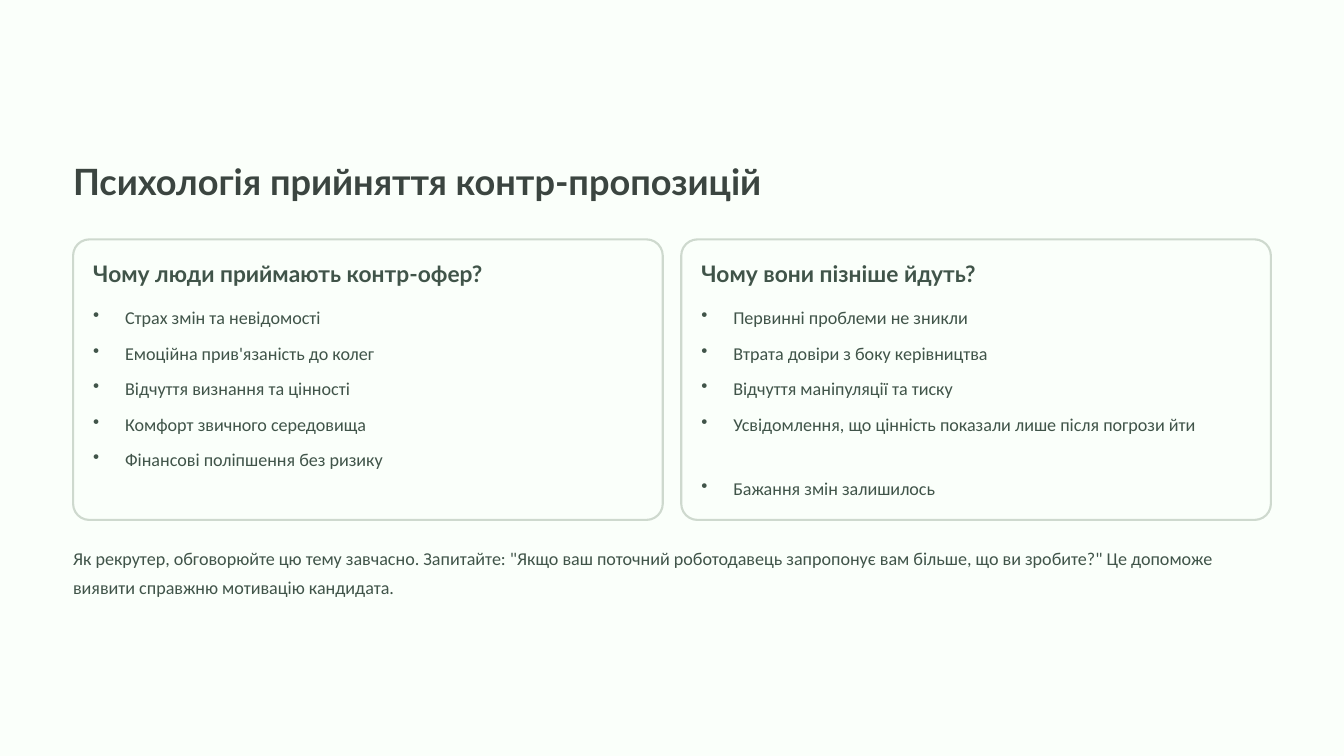
from pptx import Presentation
from pptx.dml.color import RGBColor
from pptx.enum.shapes import MSO_SHAPE
from pptx.oxml.ns import qn
from pptx.util import Inches, Pt
from lxml import etree

ROUNDED = MSO_SHAPE.ROUNDED_RECTANGLE
CREAM = RGBColor(0xFA, 0xFF, 0xFA)
BORDER = RGBColor(0xCE, 0xD9, 0xCE)
DARK = RGBColor(0x3B, 0x45, 0x40)
GREEN = RGBColor(0x40, 0x54, 0x49)

# Grid of 16 columns by 9 rows
COLS, ROWS = 16, 9
MARGIN, GAP, PAD = 0.87, 0.22, 0.24
CONTENT_W = COLS - 2 * MARGIN
CARD_W = (CONTENT_W - GAP) / 2
CARD_TOP, CARD_H = 2.85, 3.34
LINE_H, ITEM_GAP = 0.345, 0.078
INDENT = Inches(0.38)

# Each card: heading, heading width, items with their number of lines
CARDS = [
    ("Чому люди приймають контр-офер?", 5.22, [
        ("Страх змін та невідомості", 1),
        ("Емоційна прив'язаність до колег", 1),
        ("Відчуття визнання та цінності", 1),
        ("Комфорт звичного середовища", 1),
        ("Фінансові поліпшення без ризику", 1),
    ]),
    ("Чому вони пізніше йдуть?", 3.73, [
        ("Первинні проблеми не зникли", 1),
        ("Втрата довіри з боку керівництва", 1),
        ("Відчуття маніпуляції та тиску", 1),
        ("Усвідомлення, що цінність показали лише після погрози йти", 2),
        ("Бажання змін залишилось", 1),
    ]),
]
ADVICE = ('Як рекрутер, обговорюйте цю тему завчасно. Запитайте: "Якщо ваш поточний '
          'роботодавець запропонує вам більше, що ви зробите?" Це допоможе '
          'виявити справжню мотивацію кандидата.')


class Deck:
    def __init__(self):
        self.prs = Presentation()
        self.prs.slide_width, self.prs.slide_height = Inches(COLS), Inches(ROWS)
        self.slide = self.prs.slides.add_slide(self.prs.slide_layouts[6])
        fill = self.slide.background.fill
        fill.solid()
        fill.fore_color.rgb = CREAM

    def box(self, col, row, w, h):
        """Turn columns and rows into slide lengths."""
        cell_w, cell_h = self.prs.slide_width / COLS, self.prs.slide_height / ROWS
        return round(col * cell_w), round(row * cell_h), round(w * cell_w), round(h * cell_h)

    def text(self, col, row, w, h, text, font="Calibri", size=15.5, color=GREEN,
             leading=25, bold=False, bullet=False):
        tf = self.slide.shapes.add_textbox(*self.box(col, row, w, h)).text_frame
        tf.margin_left = tf.margin_right = tf.margin_top = tf.margin_bottom = 0
        tf.word_wrap = True
        p = tf.paragraphs[0]
        p.text = text
        p.line_spacing = Pt(leading)
        if bullet:
            pPr = p._p.get_or_add_pPr()
            pPr.set("marL", str(INDENT))
            pPr.set("indent", str(-INDENT))
            etree.SubElement(pPr, qn("a:buChar"), char="•")
        f = p.runs[0].font
        f.name, f.size, f.bold = font, Pt(size), bold
        f.color.rgb = color

    def heading(self, col, row, w, h, text, size, color, leading):
        self.text(col, row, w, h, text, "Lato", size, color, leading, bold=True)

    def panel(self, col, row, w, h):
        s = self.slide.shapes.add_shape(ROUNDED, *self.box(col, row, w, h))
        s.adjustments[0] = 0.058
        s.shadow.inherit = False
        s.fill.solid()
        s.fill.fore_color.rgb = CREAM
        s.line.color.rgb = BORDER
        s.line.width = Pt(1.8)

    def card(self, col, title, title_w, items):
        self.panel(col, CARD_TOP, CARD_W, CARD_H)
        left, row = col + PAD, CARD_TOP + PAD
        self.heading(left, row, title_w, 0.34, title, 19.5, GREEN, 24)
        row += 0.47
        for item, lines in items:
            self.text(left, row, CARD_W - 2 * PAD, lines * LINE_H, item, bullet=True)
            row += lines * LINE_H + ITEM_GAP


def main():
    deck = Deck()
    # Title
    deck.heading(MARGIN, 1.87, 9.36, 0.54, "Психологія прийняття контр-пропозицій", 31, DARK, 39)
    # Two cards side by side
    for i, (title, title_w, items) in enumerate(CARDS):
        deck.card(MARGIN + i * (CARD_W + GAP), title, title_w, items)
    # Closing advice
    deck.text(MARGIN, 6.43, CONTENT_W, 2 * LINE_H, ADVICE)
    deck.prs.save("out.pptx")


if __name__ == "__main__":
    main()
